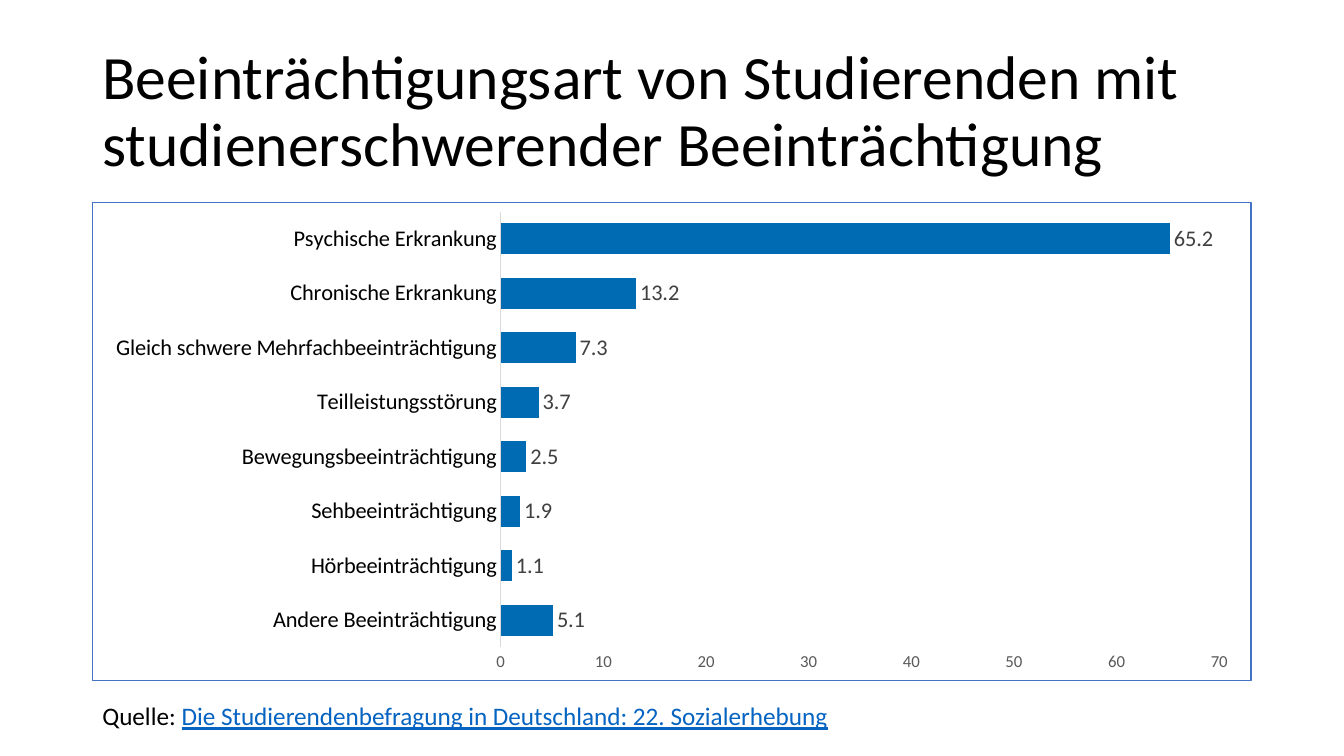
"""Build a slide with a bar chart of impairment types among students."""
from lxml import etree
from pptx import Presentation
from pptx.chart.data import CategoryChartData
from pptx.dml.color import RGBColor
from pptx.enum.chart import XL_CHART_TYPE as ChartType
from pptx.enum.chart import XL_LABEL_POSITION as LabelPosition
from pptx.enum.chart import XL_TICK_MARK as TickMark
from pptx.enum.text import MSO_ANCHOR as Anchor
from pptx.oxml import parse_xml
from pptx.util import Cm, Pt

TITLE = "Beeinträchtigungsart von Studierenden mit studienerschwerender Beeinträchtigung"
SHARES = {
    "Andere Beeinträchtigung": 5.1,
    "Hörbeeinträchtigung": 1.1,
    "Sehbeeinträchtigung": 1.9,
    "Bewegungsbeeinträchtigung": 2.5,
    "Teilleistungsstörung": 3.7,
    "Gleich schwere Mehrfachbeeinträchtigung": 7.3,
    "Chronische Erkrankung": 13.2,
    "Psychische Erkrankung": 65.2,
}
SOURCE_LABEL = "Quelle: "
SOURCE_TITLE = "Die Studierendenbefragung in Deutschland: 22. Sozialerhebung"

FONT = "Calibri"
COLORS = {
    "text": "000000",
    "bar": "006AB3",
    "value": "404040",
    "scale": "595959",
    "axis": "D9D9D9",
    "border": "4472C4",
    "link": "0563C1",
}
LEFT, WIDTH = Cm(2.33), Cm(29.21)
BORDER_XML = (
    '<c:spPr xmlns:c="http://schemas.openxmlformats.org/drawingml/2006/chart" '
    'xmlns:a="http://schemas.openxmlformats.org/drawingml/2006/main"><a:noFill/>'
    '<a:ln w="9525"><a:solidFill><a:srgbClr val="{}"/></a:solidFill></a:ln></c:spPr>'
)


def rgb(name):
    return RGBColor.from_string(COLORS[name])


def style(font, size, color):
    font.name = FONT
    font.size = Pt(size)
    font.color.rgb = rgb(color)


def add_text(slide, top, width, height, anchor, size, parts):
    frame = slide.shapes.add_textbox(LEFT, top, width, height).text_frame
    frame.word_wrap = True
    frame.vertical_anchor = anchor
    paragraph = frame.paragraphs[0]
    for text, color in parts:
        run = paragraph.add_run()
        run.text = text
        style(run.font, size, color)
        run.font.underline = color == "link"
    return paragraph


def add_share_chart(slide):
    shares = CategoryChartData()
    shares.categories = list(SHARES)
    shares.add_series("Series 1", list(SHARES.values()))
    chart = slide.shapes.add_chart(
        ChartType.BAR_CLUSTERED, LEFT, Cm(5.08), WIDTH, Cm(12.09), shares
    ).chart
    style(chart.font, 10, "text")
    chart.has_legend = False
    chart.has_title = False

    names, scale = chart.category_axis, chart.value_axis
    for axis, size, color in ((names, 16, "text"), (scale, 12, "scale")):
        style(axis.tick_labels.font, size, color)
        axis.major_tick_mark = axis.minor_tick_mark = TickMark.NONE
        axis.has_major_gridlines = False
    names.format.line.color.rgb = rgb("axis")
    names.format.line.width = Pt(0.75)
    scale.format.line.fill.background()
    scale.minimum_scale, scale.maximum_scale, scale.major_unit = 0, 70, 10

    plot = chart.plots[0]
    plot.gap_width = 75
    plot.vary_by_categories = False
    bars = plot.series[0]
    bars.format.fill.solid()
    bars.format.fill.fore_color.rgb = rgb("bar")
    labels = bars.data_labels
    labels.show_value = True
    labels.position = LabelPosition.OUTSIDE_END
    style(labels.font, 16, "value")

    chart_tag = etree.QName(chart.element).namespace
    chart.element.find(f"{{{chart_tag}}}chart").addnext(
        parse_xml(BORDER_XML.format(COLORS["border"]))
    )


def main():
    deck = Presentation()
    deck.slide_width, deck.slide_height = Cm(33.87), Cm(19.05)
    slide = deck.slides.add_slide(deck.slide_layouts[6])
    title = add_text(slide, Cm(1.01), WIDTH, Cm(3.68), Anchor.MIDDLE, 44, [(TITLE, "text")])
    title.line_spacing = 0.9
    add_share_chart(slide)
    source = [(SOURCE_LABEL, "text"), (SOURCE_TITLE, "link")]
    add_text(slide, Cm(17.53), Cm(22.58), Cm(1.03), Anchor.TOP, 18, source)
    deck.save("out.pptx")


if __name__ == "__main__":
    main()
